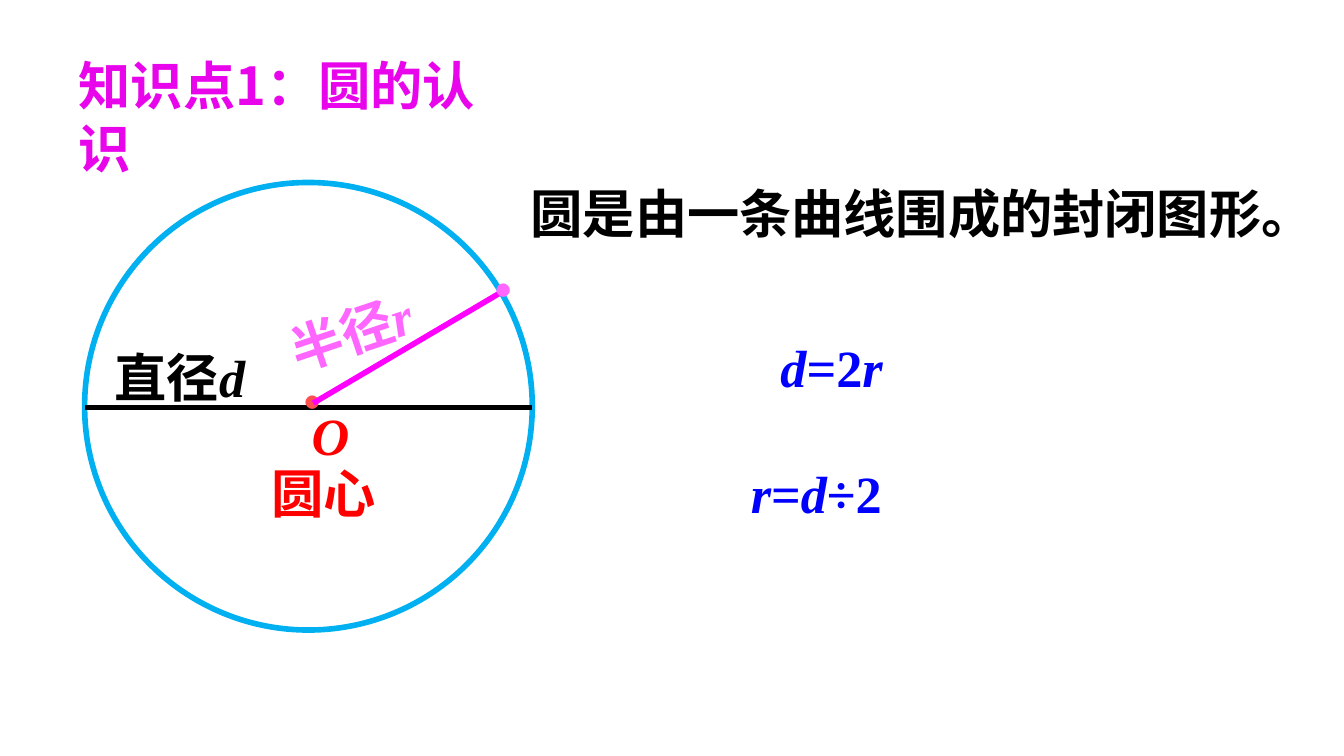
import pptx
import pptx.util
import pptx.dml.color
import pptx.enum.shapes
import pptx.enum.text
import pptx.oxml.ns
from lxml import etree

Cm = pptx.util.Cm
Pt = pptx.util.Pt
qn = pptx.oxml.ns.qn
align = pptx.enum.text.PP_ALIGN
hues = {
    "title": "E805EB",
    "ring": "00B0F0",
    "black": "000000",
    "dot": "FF5050",
    "red": "FF0000",
    "ray": "FF00FF",
    "pink": "FF66FF",
    "blue": "0000FF",
}
sans = "Noto Sans CJK SC"
serif = "Times New Roman"

deck = pptx.Presentation()
deck.slide_width = Cm(25.4)
deck.slide_height = Cm(14.29)
slide = deck.slides.add_slide(deck.slide_layouts[6])
shapes = slide.shapes


def write(left, top, width, hue, runs, side=align.LEFT, pad=0.25, turn=0):
    box = shapes.add_textbox(Cm(left), Cm(top), Cm(width), Cm(1.45))
    box.rotation = turn
    frame = box.text_frame
    frame.word_wrap = True
    frame.auto_size = pptx.enum.text.MSO_AUTO_SIZE.SHAPE_TO_FIT_TEXT
    frame.margin_left = Cm(pad)
    para = frame.paragraphs[0]
    para.alignment = side
    for text, face, slant in runs:
        run = para.add_run()
        run.text = text
        font = run.font
        font.name = face
        font.size = Pt(28)
        font.bold = True
        font.italic = slant
        font.color.rgb = pptx.dml.color.RGBColor.from_string(hues[hue])
        etree.SubElement(run._r.get_or_add_rPr(), qn("a:ea"), typeface=face)


def draw(start, end, hue):
    line = shapes.add_connector(
        pptx.enum.shapes.MSO_CONNECTOR.STRAIGHT,
        *[Cm(n) for n in start + end])
    line.line.color.rgb = pptx.dml.color.RGBColor.from_string(hues[hue])
    line.line.width = Pt(3)
    etree.SubElement(line._element.spPr, qn("a:effectLst"))


write(1.24, 0.89, 8.94, "title", [("知识点1：圆的认识", sans, False)])

ring = shapes.add_shape(
    pptx.enum.shapes.MSO_SHAPE.OVAL, Cm(1.6), Cm(3.45), Cm(8.46), Cm(8.46))
ring.shadow.inherit = False
ring.fill.background()
ring.line.color.rgb = pptx.dml.color.RGBColor.from_string(hues["ring"])
ring.line.width = Pt(3)

draw((10.06, 7.7), (1.6, 7.7), "black")
write(4.85, 6.88, 2.11, "dot", [("·", sans, False)], align.CENTER)
write(5.64, 7.49, 1.7, "red", [("O", serif, True)])
write(4.85, 8.59, 2.54, "red", [("圆心", sans, False)], align.CENTER)
draw((5.92, 7.62), (9.53, 5.49), "ray")
write(4.75, 5.49, 4.17, "pink",
      [("半径", sans, False), ("r", serif, True)], pad=0.7, turn=341.4)
write(1.47, 6.4, 4.6, "black",
      [("直径", sans, False), ("d", serif, True)], pad=0.7)
write(8.03, 4.75, 2.97, "pink", [("·", sans, False)], align.CENTER)
write(9.78, 3.3, 14.83, "black",
      [("圆是由一条曲线围成的封闭图形。", sans, False)])
write(14.5, 6.22, 2.84, "blue",
      [("d", serif, True), ("=2", serif, False), ("r", serif, True)])
write(13.94, 8.59, 3.96, "blue",
      [("r", serif, True), ("=", serif, False),
       ("d", serif, True), ("÷2", serif, False)])

deck.save("out.pptx")
